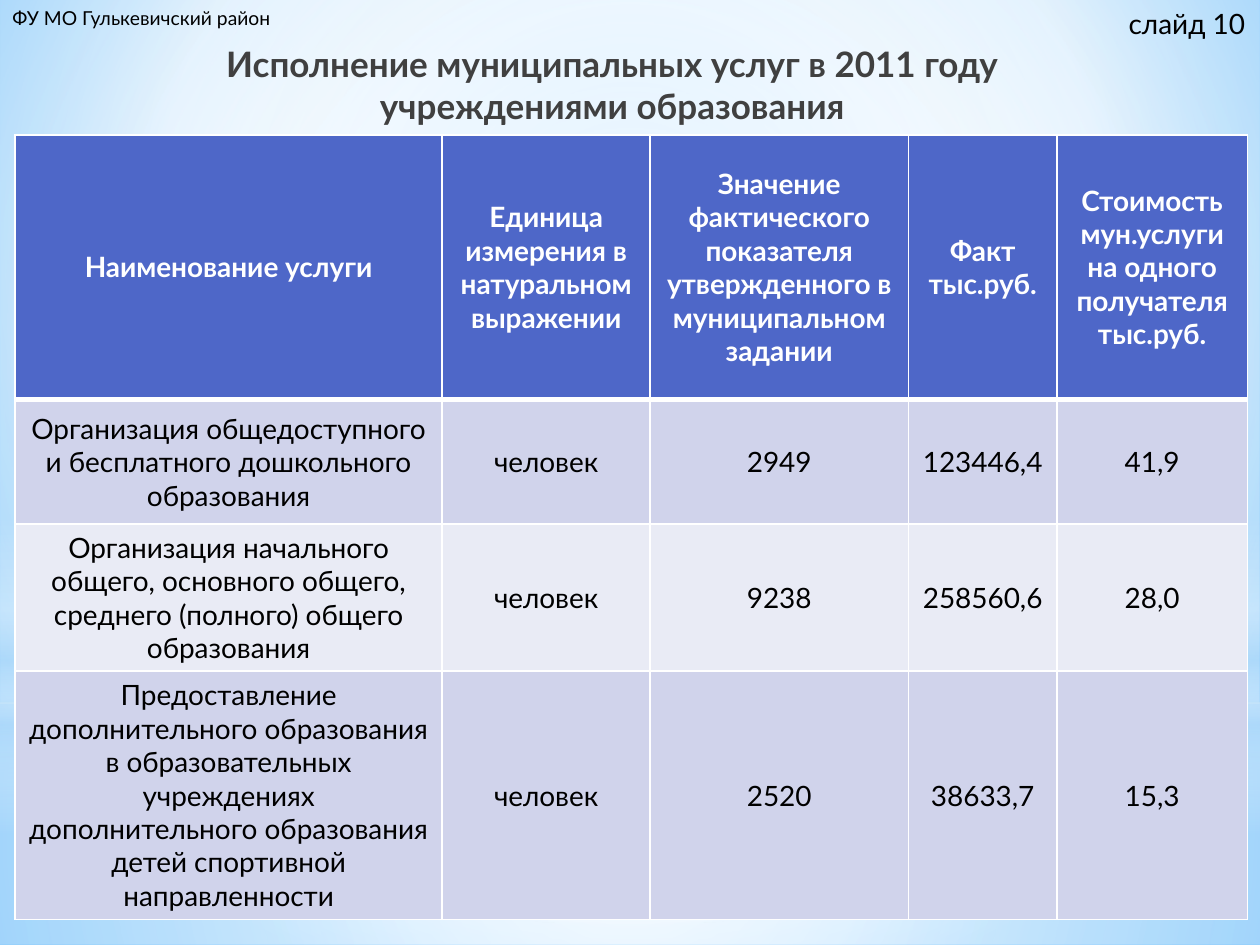
import lxml.etree
import pptx
import pptx.dml.color
import pptx.enum.shapes
import pptx.enum.text
import pptx.oxml.ns
import pptx.util

Inches = pptx.util.Inches
Pt = pptx.util.Pt
Shapes = pptx.enum.shapes.MSO_SHAPE
qn = pptx.oxml.ns.qn

COLORS = {
    "white": "FFFFFF",
    "black": "000000",
    "title": "404040",
    "header": "4E67C8",
    "band_dark": "D0D3EB",
    "band_light": "E9EBF5",
    "sky": "B4DCFA",
    "sky_inner": "9ED5FF",
    "sky_outer": "5BB9FF",
}
FORMATS = {
    "title": {"name": "Lato", "size": Pt(20), "bold": True},
    "header": {"name": "Lato", "size": Pt(16), "bold": True},
    "body": {"name": "Lato", "size": Pt(16), "bold": False},
    "label": {"name": "Lato", "size": Pt(11), "bold": False},
}
CENTER = (50, 50, 50, 50)
BACKGROUND_STOPS = [(0, "sky_inner", 100), (60, "white", 100), (100, "sky_outer", 100)]
LAYERS = [
    (Shapes.RECTANGLE, (0, 5.58, 10, 1.92), CENTER,
     [(0, "white", 91), (37, "white", 76), (100, "sky", 79)]),
    (Shapes.RECTANGLE, (0, 0, 10, 5.58), CENTER,
     [(0, "white", 89), (48, "white", 62), (100, "sky", 79)]),
    (Shapes.RECTANGLE, (0, 4.12, 10, 2.5), None,
     [(0, "white", 0), (29, "white", 30), (45, "sky", 40),
      (55, "white", 26), (65, "sky", 60), (100, "white", 0)]),
    (Shapes.OVAL, (0, 1.75, 10, 5.58), CENTER,
     [(0, "white", 100), (56, "white", 0)]),
]
COLUMN_WIDTHS = [3.39, 1.65, 2.05, 1.18, 1.51]
ROW_HEIGHTS = [2.1, 0.99, 1.16, 1.97]
ROWS = [
    ["Наименование услуги",
     "Единица измерения в натуральном выражении",
     "Значение фактического показателя утвержденного в муниципальном задании",
     "Факт\nтыс.руб.",
     "Стоимость\nмун.услуги на одного получателя тыс.руб."],
    ["Организация общедоступного и бесплатного дошкольного образования",
     "человек", "2949", "123446,4", "41,9"],
    ["Организация начального общего, основного общего, "
     "среднего (полного) общего образования",
     "человек", "9238", "258560,6", "28,0"],
    ["Предоставление дополнительного образования в образовательных учреждениях "
     "дополнительного образования детей спортивной направленности",
     "человек", "2520", "38633,7", "15,3"],
]


def rgb(color):
    return pptx.dml.color.RGBColor.from_string(COLORS[color])


def lengths(box):
    return [Inches(value) for value in box]


def add_child(parent, tag, **attributes):
    values = {name: str(value) for name, value in attributes.items()}
    return lxml.etree.SubElement(parent, qn(tag), values)


def set_gradient(fill, properties, stops, focus):
    fill.solid()
    solid = properties.find(qn("a:solidFill"))
    gradient = lxml.etree.Element(qn("a:gradFill"), {"rotWithShape": "1"})
    stop_list = add_child(gradient, "a:gsLst")
    for position, color, opacity in stops:
        stop = add_child(stop_list, "a:gs", pos=position * 1000)
        value = add_child(stop, "a:srgbClr", val=COLORS[color])
        if opacity < 100:
            add_child(value, "a:alpha", val=opacity * 1000)
    if focus:
        circle = add_child(gradient, "a:path", path="circle")
        sides = {side: value * 1000 for side, value in zip("ltrb", focus)}
        add_child(circle, "a:fillToRect", **sides)
    else:
        add_child(gradient, "a:lin", ang=90 * 60000, scaled=0)
    properties.replace(solid, gradient)


def write_text(text_frame, text, style, color, alignment):
    text_frame.text = text
    for paragraph in text_frame.paragraphs:
        paragraph.alignment = alignment
        for run in paragraph.runs:
            for name, value in FORMATS[style].items():
                setattr(run.font, name, value)
            run.font.color.rgb = rgb(color)


def set_borders(cell, widths):
    properties = cell._tc.get_or_add_tcPr()
    for side, width in widths.items():
        line = add_child(properties, f"a:ln{side}", w=Pt(width))
        add_child(add_child(line, "a:solidFill"), "a:srgbClr", val=COLORS["white"])


def add_backdrop(slide):
    fill = slide.background.fill
    fill.solid()
    properties = slide._element.find(".//" + qn("p:bgPr"))
    set_gradient(fill, properties, BACKGROUND_STOPS, (20, 10, 20, 60))
    for kind, box, focus, stops in LAYERS:
        shape = slide.shapes.add_shape(kind, *lengths(box))
        shape.shadow.inherit = False
        shape.line.fill.background()
        set_gradient(shape.fill, shape._element.spPr, stops, focus)


def add_text(slide, box, text, style, color, alignment, wrap):
    text_box = slide.shapes.add_textbox(*lengths(box))
    text_box.text_frame.word_wrap = wrap
    write_text(text_box.text_frame, text, style, color, alignment)


def add_services_table(slide, box):
    frame = slide.shapes.add_table(len(ROWS), len(COLUMN_WIDTHS), *lengths(box))
    table = frame.table
    for column, width in zip(table.columns, COLUMN_WIDTHS):
        column.width = Inches(width)
    for index, (row, height, texts) in enumerate(zip(table.rows, ROW_HEIGHTS, ROWS)):
        row.height = Inches(height)
        is_header = index == 0
        style, color = ("header", "white") if is_header else ("body", "black")
        band = "header" if is_header else ("band_light", "band_dark")[index % 2]
        borders = {"L": 1, "R": 1, "T": 3 if index == 1 else 1, "B": 3 if is_header else 1}
        for cell, text in zip(row.cells, texts):
            set_borders(cell, borders)
            cell.fill.solid()
            cell.fill.fore_color.rgb = rgb(band)
            cell.vertical_anchor = pptx.enum.text.MSO_ANCHOR.MIDDLE
            write_text(cell.text_frame, text, style, color, pptx.enum.text.PP_ALIGN.CENTER)


def main():
    presentation = pptx.Presentation()
    presentation.slide_width, presentation.slide_height = lengths((10, 7.5))
    slide = presentation.slides.add_slide(presentation.slide_layouts[6])
    align = pptx.enum.text.PP_ALIGN
    add_backdrop(slide)
    add_text(slide, (1.3, 0.29, 7.12, 0.87),
             "Исполнение муниципальных услуг в 2011 году учреждениями образования",
             "title", "title", align.CENTER, True)
    add_services_table(slide, (0.12, 1.07, 9.78, 6.22))
    add_text(slide, (8.86, 0, 1.14, 0.37), "слайд 10", "body", "black", align.LEFT, False)
    add_text(slide, (0, 0, 2.25, 0.29), "ФУ МО Гулькевичский район",
             "label", "black", align.LEFT, False)
    presentation.save("out.pptx")


if __name__ == "__main__":
    main()
